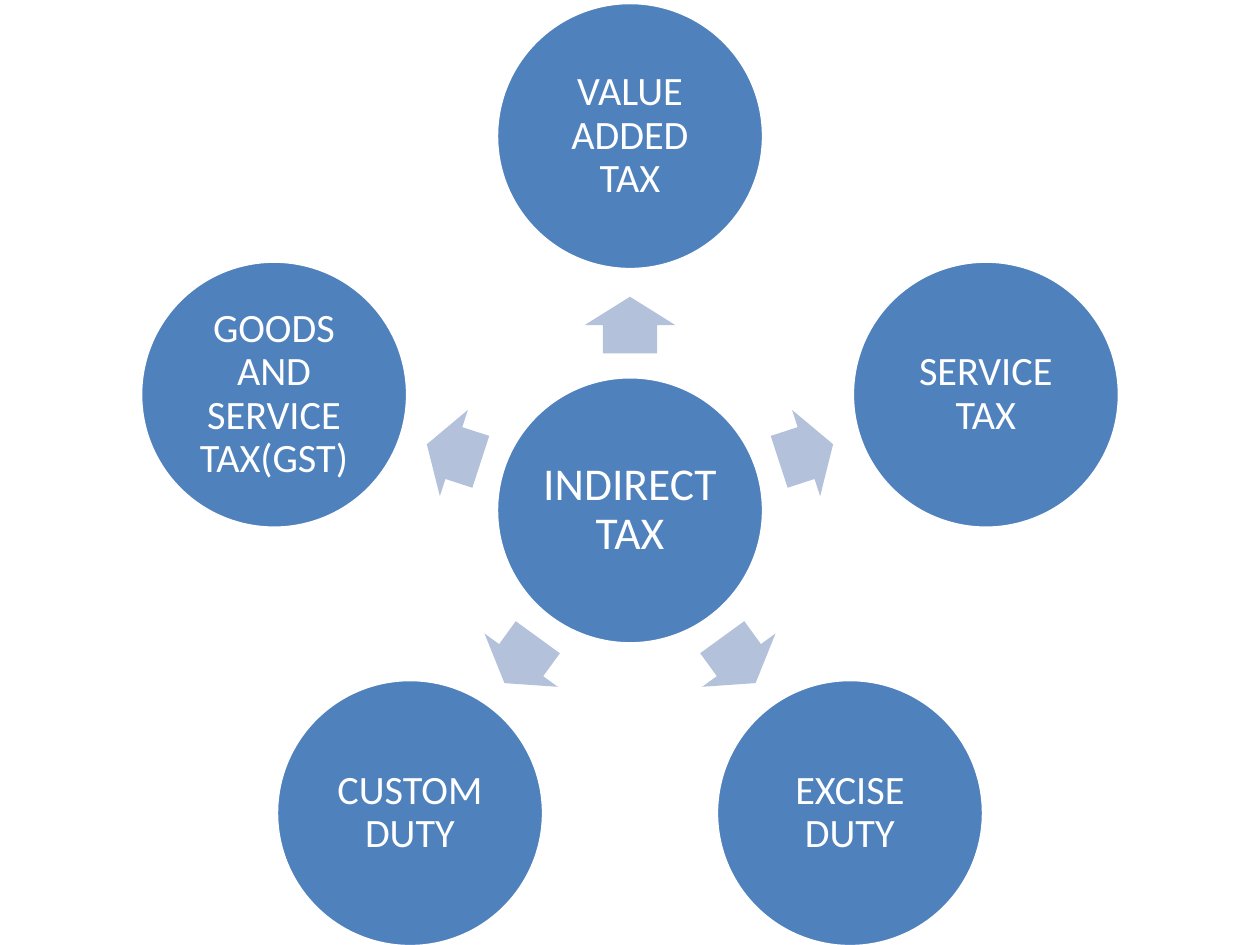
from dataclasses import dataclass
from math import cos, radians, sin

from pptx import Presentation, util as u
from pptx.dml.color import RGBColor
from pptx.enum import shapes, text

BLUE = RGBColor(0x4F, 0x81, 0xBD)
PALE_BLUE = RGBColor(0xB3, 0xC1, 0xDB)
WHITE = RGBColor(0xFF, 0xFF, 0xFF)

WIDTH, HEIGHT = u.Inches(10), u.Inches(7.5)
HUB_X, HUB_Y = WIDTH * 0.5, HEIGHT * 0.54
DIAMETER = WIDTH * 0.21
ORBIT = WIDTH * 0.3
ARROW_ORBIT = ORBIT / 2
ARROW_LENGTH, ARROW_BREADTH = WIDTH * 0.05, WIDTH * 0.07
DIAMETER, ORBIT, ARROW_ORBIT = u.Inches(2.12), u.Inches(2.97), u.Inches(1.47)
ARROW_LENGTH, ARROW_BREADTH = u.Inches(0.45), u.Inches(0.72)


@dataclass(frozen=True)
class Tax:
    label: str
    angle: float = 0  # clockwise degrees from the right
    orbit: int = ORBIT
    size: int = 23
    inset: float = 0.03


HUB = Tax("INDIRECT TAX", orbit=0, size=26, inset=0.04)
LABELS = ("VALUE ADDED TAX", "SERVICE TAX", "EXCISE DUTY", "CUSTOM DUTY",
          "GOODS AND SERVICE TAX(GST)")
BRANCHES = [Tax(label, (270 + i * 360 / len(LABELS)) % 360)
            for i, label in enumerate(LABELS)]


def add_on_orbit(slide, kind, angle: float, orbit: int, width: int, height: int,
                 fill: RGBColor):
    """Add a shape centred on the given orbit around the hub."""
    x = HUB_X + orbit * cos(radians(angle))
    y = HUB_Y + orbit * sin(radians(angle))
    shape = slide.shapes.add_shape(kind, int(x - width / 2), int(y - height / 2),
                                   width, height)
    shape.shadow.inherit = False
    shape.fill.solid()
    shape.fill.fore_color.rgb = fill
    return shape


def add_circle(slide, tax: Tax) -> None:
    circle = add_on_orbit(slide, shapes.MSO_SHAPE.OVAL, tax.angle, tax.orbit,
                          DIAMETER, DIAMETER, BLUE)
    circle.line.color.rgb = WHITE
    circle.line.width = u.Pt(2)
    frame = circle.text_frame
    frame.text = tax.label
    frame.word_wrap = True
    frame.vertical_anchor = text.MSO_ANCHOR.MIDDLE
    frame.margin_left = frame.margin_right = u.Inches(tax.inset)
    frame.margin_top = frame.margin_bottom = u.Inches(tax.inset)
    paragraph = frame.paragraphs[0]
    paragraph.alignment = text.PP_ALIGN.CENTER
    paragraph.line_spacing = 0.9
    font = paragraph.runs[0].font
    font.name = "Calibri"
    font.size = u.Pt(tax.size)
    font.color.rgb = WHITE


def add_arrow(slide, angle: float) -> None:
    arrow = add_on_orbit(slide, shapes.MSO_SHAPE.RIGHT_ARROW, angle, ARROW_ORBIT,
                         ARROW_LENGTH, ARROW_BREADTH, PALE_BLUE)
    arrow.line.fill.background()
    arrow.rotation = angle
    arrow.adjustments[0] = 0.6
    arrow.adjustments[1] = 0.5


def main() -> None:
    deck = Presentation()
    deck.slide_width, deck.slide_height = WIDTH, HEIGHT
    slide = deck.slides.add_slide(deck.slide_layouts.get_by_name("Blank"))
    add_circle(slide, HUB)
    for tax in BRANCHES:
        add_arrow(slide, tax.angle)
        add_circle(slide, tax)
    deck.save("out.pptx")


if __name__ == "__main__":
    main()
